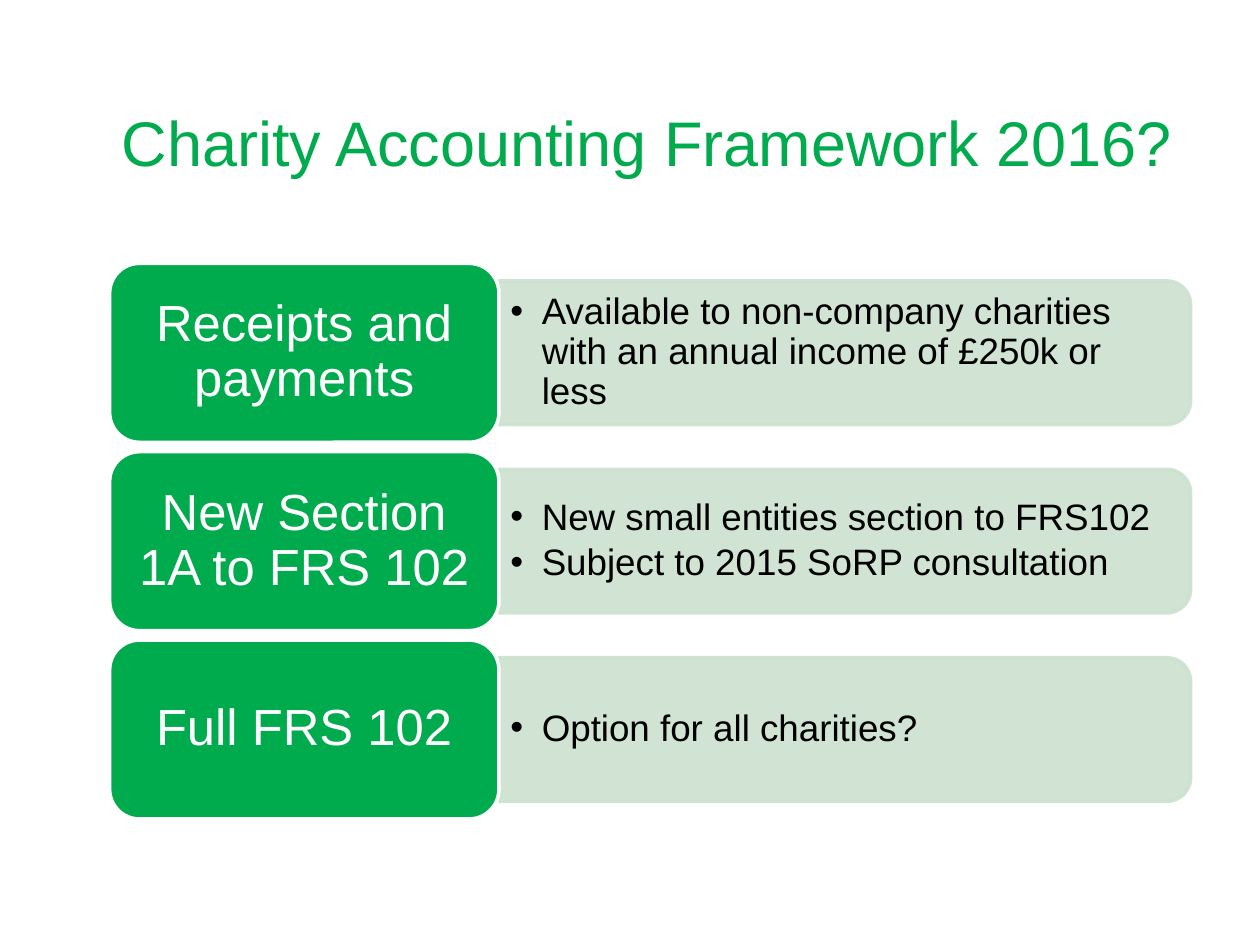
from dataclasses import dataclass

from lxml import etree
from pptx import Presentation
from pptx.dml.color import RGBColor
from pptx.enum import shapes, text
from pptx.oxml import ns
from pptx.util import Inches, Pt

WIDTH, HEIGHT = 10, 7.5
GREEN, PALE, WHITE, BLACK = "00AB4E", "CCE2D0", "FFFFFF", "000000"
LEFT, TOP, PITCH = 0.87, 2.09, 1.495
LABEL_WIDTH, LABEL_HEIGHT = 3.09, 1.42
PANEL_WIDTH, PANEL_HEIGHT = 5.49, 1.14
DETAIL_WIDTH, DETAIL_HEIGHT = 5.43, 1.03


@dataclass(frozen=True)
class Box:
    left: float
    top: float
    width: float
    height: float

    def lengths(self) -> list:
        """Return the box as slide lengths."""
        return [Inches(v) for v in (self.left, self.top, self.width, self.height)]


@dataclass(frozen=True)
class Option:
    label: str
    details: tuple[str, ...]


OPTIONS = (
    Option("Receipts and payments",
           ("Available to non-company charities with an annual income of £250k or less",)),
    Option("New Section 1A to FRS 102",
           ("New small entities section to FRS102", "Subject to 2015 SoRP consultation")),
    Option("Full FRS 102", ("Option for all charities?",)),
)


def color(value: str) -> RGBColor:
    """Turn a hex string into a colour."""
    return RGBColor.from_string(value)


def set_values(target, values: dict) -> None:
    """Set each named format value on the target."""
    for name, value in values.items():
        setattr(target, name, value)


def add_bullet(paragraph) -> None:
    """Give a paragraph a hanging round bullet."""
    properties = paragraph._p.get_or_add_pPr()
    properties.set("marL", str(Inches(0.25)))
    properties.set("indent", str(-Inches(0.25)))
    etree.SubElement(properties, ns.qn("a:buFont")).set("typeface", "Arial")
    etree.SubElement(properties, ns.qn("a:buChar")).set("char", "•")


def write(shape, lines: tuple[str, ...], size: float, ink: str, insets: tuple[float, float],
          layout: dict, bullets: bool = False) -> None:
    """Write vertically centred paragraphs into a shape."""
    frame = shape.text_frame
    across, down = (Inches(inset) for inset in insets)
    set_values(frame, {"word_wrap": True, "vertical_anchor": text.MSO_ANCHOR.MIDDLE,
                       "margin_left": across, "margin_right": across,
                       "margin_top": down, "margin_bottom": down})
    for index, line in enumerate(lines):
        paragraph = frame.add_paragraph() if index else frame.paragraphs[0]
        paragraph.text = line
        if bullets:
            add_bullet(paragraph)
        set_values(paragraph, layout)
        set_values(paragraph.runs[0].font, {"name": "Arial", "size": Pt(size)})
        paragraph.runs[0].font.color.rgb = color(ink)


def add_block(slide, kind, box: Box, fill: str, line: str):
    """Add a filled and outlined preset shape."""
    shape = slide.shapes.add_shape(kind, *box.lengths())
    shape.shadow.inherit = False
    shape.fill.solid()
    shape.fill.fore_color.rgb = color(fill)
    shape.line.color.rgb = color(line)
    shape.line.width = Pt(2)
    return shape


def add_panel(slide, left: float, middle: float) -> None:
    """Add a translucent panel rounded on its right side."""
    box = Box(left + (PANEL_WIDTH - PANEL_HEIGHT) / 2, middle - PANEL_WIDTH / 2,
              PANEL_HEIGHT, PANEL_WIDTH)
    panel = add_block(slide, shapes.MSO_SHAPE.ROUND_2_SAME_RECTANGLE, box, PALE, PALE)
    panel.rotation = 90
    for tint in panel._element.spPr.iter(ns.qn("a:srgbClr")):
        etree.SubElement(tint, ns.qn("a:alpha")).set("val", "90000")


def add_option(slide, option: Option, row: int) -> None:
    """Add one row: panel, bulleted details and label."""
    top = TOP + row * PITCH
    middle = top + LABEL_HEIGHT / 2
    right = LEFT + LABEL_WIDTH
    add_panel(slide, right, middle)
    box = Box(right, middle - DETAIL_HEIGHT / 2, DETAIL_WIDTH, DETAIL_HEIGHT)
    details = slide.shapes.add_textbox(*box.lengths())
    write(details, option.details, 21, BLACK, (0.09, 0.04),
          {"line_spacing": 0.9, "space_after": Pt(3.4)}, bullets=True)
    label = add_block(slide, shapes.MSO_SHAPE.ROUNDED_RECTANGLE,
                      Box(LEFT, top, LABEL_WIDTH, LABEL_HEIGHT), GREEN, WHITE)
    write(label, (option.label,), 29, WHITE, (0.12, 0.06),
          {"line_spacing": 0.9, "alignment": text.PP_ALIGN.CENTER})


def main() -> None:
    """Build and save the slide."""
    presentation = Presentation()
    set_values(presentation, {"slide_width": Inches(WIDTH), "slide_height": Inches(HEIGHT)})
    slide = presentation.slides.add_slide(presentation.slide_layouts[6])
    for row, option in enumerate(OPTIONS):
        add_option(slide, option, row)
    title = slide.shapes.add_textbox(*Box(LEFT, 0.31, 9, 1.62).lengths())
    write(title, ("Charity Accounting Framework 2016?",), 36, GREEN, (0.1, 0.05),
          {"alignment": text.PP_ALIGN.LEFT})
    presentation.save("out.pptx")


if __name__ == "__main__":
    main()
